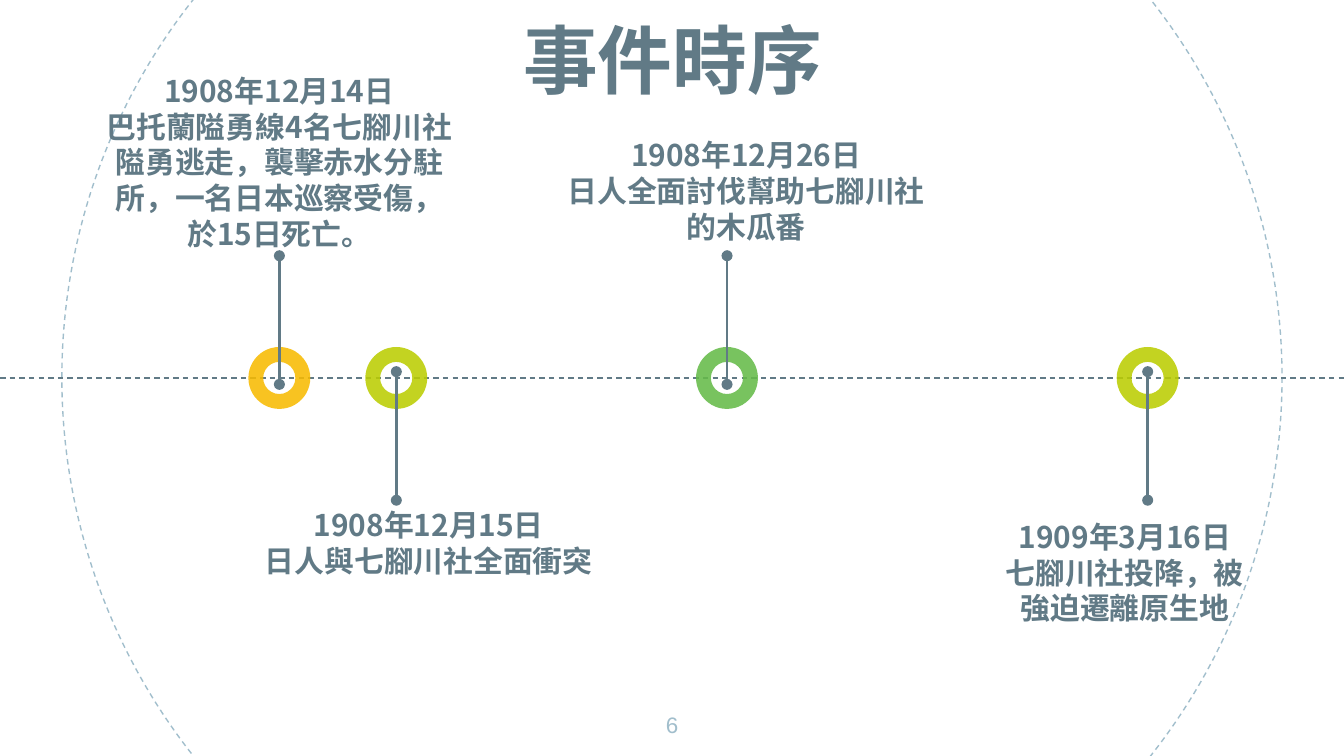
from dataclasses import dataclass

from lxml.etree import SubElement
from pptx import Presentation
from pptx.dml.color import RGBColor
from pptx.enum.dml import MSO_LINE_DASH_STYLE as Dash
from pptx.enum.shapes import MSO_CONNECTOR as Link, MSO_SHAPE as Shape
from pptx.enum.text import MSO_ANCHOR as Anchor, MSO_AUTO_SIZE as AutoSize, PP_ALIGN as Align
from pptx.oxml.ns import qn
from pptx.util import Cm, Pt


@dataclass(frozen=True)
class Theme:
    """Colours, fonts and type sizes of the deck."""
    ink: str = "617A86"
    pale: str = "A1BECC"
    amber: str = "F8BB00"
    lime: str = "BBCD00"
    green: str = "65BB48"
    cjk: str = "Noto Sans CJK SC"
    latin: str = "Arial"
    title: int = 40
    body: int = 16
    number: int = 12
    thin: float = 0.75
    thick: float = 1.5


THEME = Theme()
WIDTH, HEIGHT = 25.4, 14.29
AXIS = HEIGHT / 2
RING = 1.17
STEM_START, STEM_END = 0.12, 2.31
UP, DOWN = -1, 1

EVENTS = [
    (5.28, THEME.amber, UP, (1.7, 1.12, 7.16, 3.71),
     ["1908年12月14日", "巴托蘭隘勇線4名七腳川社隘勇逃走，襲擊赤水分駐所，一名日本巡察受傷，於15日死亡。"]),
    (7.49, THEME.lime, DOWN, (4.7, 9.33, 6.81, 2.41),
     ["1908年12月15日", "日人與七腳川社全面衝突"]),
    (13.74, THEME.green, UP, (10.31, 2.34, 7.59, 2.79),
     ["1908年12月26日", "日人全面討伐幫助七腳川社的木瓜番"]),
    (21.69, THEME.lime, DOWN, (18.49, 9.55, 5.54, 2.21),
     ["1909年3月16日", "七腳川社投降，被強迫遷離原生地"]),
]


def assign(target, values):
    """Set each attribute named in a dict of format values."""
    for name, value in values.items():
        setattr(target, name, value)


def lengths(box):
    """Turn a box in centimetres into lengths."""
    return [Cm(value) for value in box]


def write(frame, lines, size, color, font, bold=True, anchor=Anchor.TOP):
    """Fill a text frame with centred paragraphs in one format."""
    sides = ("left", "top", "right", "bottom")
    assign(frame, {"word_wrap": True, "auto_size": AutoSize.NONE, "vertical_anchor": anchor,
                   **{f"margin_{side}": Cm(0.25) for side in sides}})
    for index, line in enumerate(lines):
        para = frame.paragraphs[0] if index == 0 else frame.add_paragraph()
        para.alignment = Align.CENTER
        span = para.add_run()
        span.text = line
        assign(span.font, {"name": font, "size": Pt(size), "bold": bold})
        span.font.color.rgb = RGBColor.from_string(color)
        SubElement(span.font._element, qn("a:ea"), typeface=font)


def style_line(line, color, width, dash=None):
    """Give a line its colour, width and dash."""
    line.color.rgb = RGBColor.from_string(color)
    assign(line, {"width": Pt(width), "dash_style": dash})


def add_line(page, start, end, width, dash=None):
    """Draw a straight line without a shadow."""
    line = page.shapes.add_connector(Link.STRAIGHT, *lengths(start + end))
    style_line(line.line, THEME.ink, width, dash)
    SubElement(line._element.spPr, qn("a:effectLst"))
    return line


def add_backdrop(page, box):
    """Draw the dashed circle and the time axis."""
    circle = page.shapes.add_shape(Shape.OVAL, *lengths(box))
    circle.shadow.inherit = False
    circle.fill.background()
    style_line(circle.line, THEME.pale, THEME.thin, Dash.DASH)
    add_line(page, (0, AXIS), (WIDTH, AXIS), THEME.thin, Dash.DASH)


def add_title(page, box, text):
    """Place and format the title placeholder."""
    title = page.shapes.title
    assign(title, dict(zip(("left", "top", "width", "height"), lengths(box))))
    write(title.text_frame, [text], THEME.title, THEME.ink, THEME.cjk, anchor=Anchor.BOTTOM)


def add_text(page, box, lines, *style, **options):
    """Add a wrapped text box."""
    write(page.shapes.add_textbox(*lengths(box)).text_frame, lines, *style, **options)


def add_event(page, center, color, side, box, lines):
    """Add one event: ring on the axis, stem and caption."""
    ring_box = (center - RING / 2, AXIS - RING / 2, RING, RING)
    ring = page.shapes.add_shape(Shape.DONUT, *lengths(ring_box))
    ring.adjustments[0] = 0.24
    ring.shadow.inherit = False
    ring.fill.solid()
    ring.fill.fore_color.rgb = RGBColor.from_string(color)
    ring.line.fill.background()
    tint = ring._element.spPr.find(qn("a:solidFill")).find(qn("a:srgbClr"))
    SubElement(tint, qn("a:alpha"), val="87000")
    stem = add_line(page, (center, AXIS - side * STEM_START),
                    (center, AXIS + side * STEM_END), THEME.thick)
    for end in ("a:headEnd", "a:tailEnd"):
        SubElement(stem.line._get_or_add_ln(), qn(end), type="oval")
    add_text(page, box, lines, THEME.body, THEME.ink, THEME.cjk)


def main():
    """Build the timeline slide and save the deck."""
    deck = Presentation()
    assign(deck, {"slide_width": Cm(WIDTH), "slide_height": Cm(HEIGHT)})
    page = deck.slides.add_slide(deck.slide_layouts[5])
    add_backdrop(page, (1.17, -4.39, 23.06, 23.06))
    add_title(page, (5.38, 0.43, 14.66, 1.78), "事件時序")
    for event in EVENTS:
        add_event(page, *event)
    add_text(page, (12.05, 13.2, 1.3, 1.09), ["6"],
             THEME.number, THEME.pale, THEME.latin, bold=False)
    deck.save("out.pptx")


if __name__ == "__main__":
    main()
